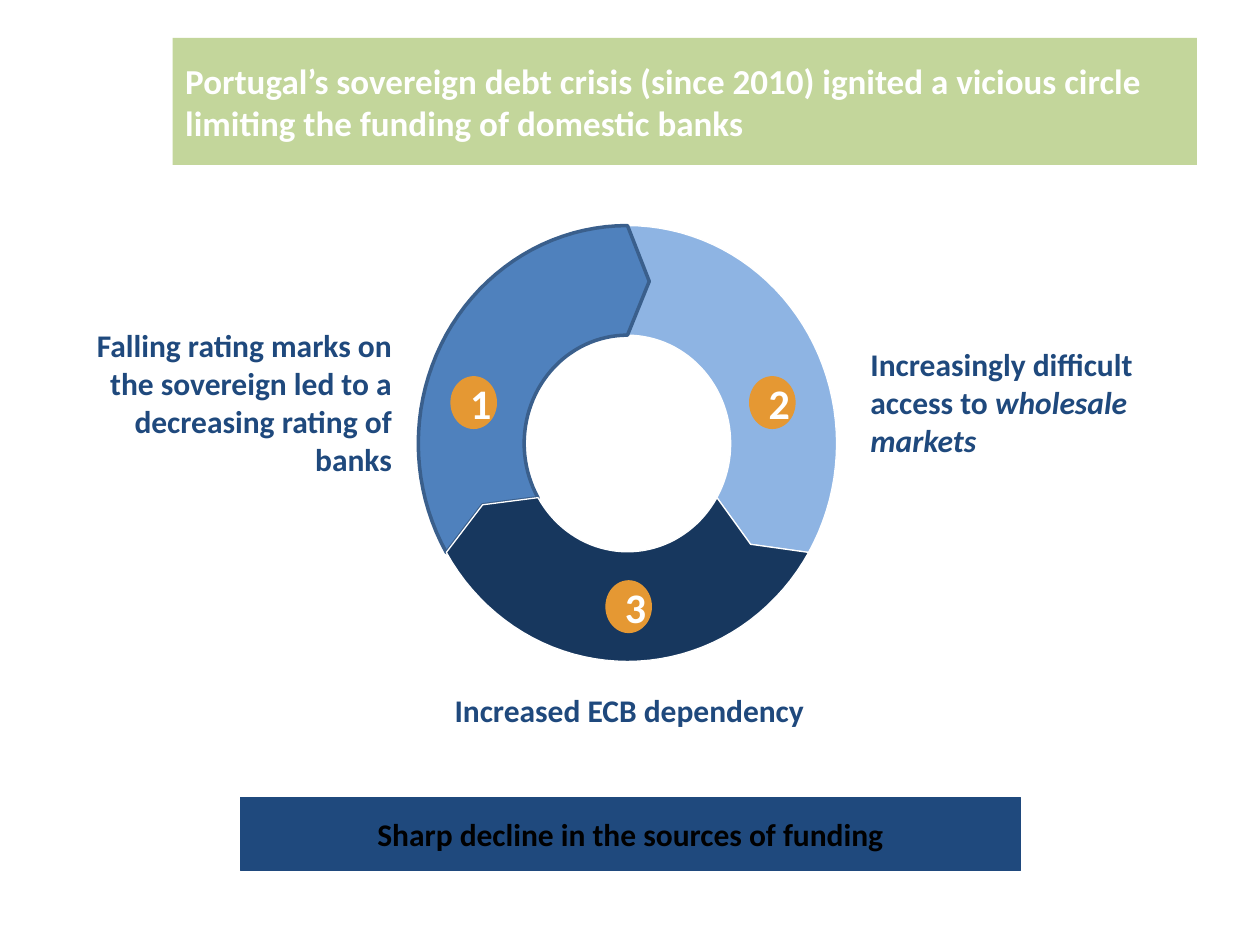
from math import cos, radians, sin

from pptx import Presentation
from pptx.dml.color import RGBColor
from pptx.enum.shapes import MSO_SHAPE
from pptx.enum.text import MSO_ANCHOR, MSO_AUTO_SIZE, PP_ALIGN
from pptx.util import Inches, Pt

NAVY = "1F497D"
WHITE = "FFFFFF"
AMBER = "E59833"
MID_X, MID_Y = 4.98, 3.52
OUTER = (1.66, 1.73)
INNER = (0.82, 0.86)
CENTRE = (1.24, 1.3)
SWEEP, TIP, STEP = 120, 8, 3


def color(code):
    return RGBColor.from_string(code)


def paint(shape, fill, line=None, width=0.75):
    shape.fill.solid()
    shape.fill.fore_color.rgb = color(fill)
    if line:
        shape.shadow.inherit = False
        shape.line.color.rgb = color(line)
        shape.line.width = Pt(width)


def write(shape, parts, size, code, align, inset=None):
    frame = shape.text_frame
    frame.word_wrap = True
    frame.auto_size = MSO_AUTO_SIZE.NONE
    frame.vertical_anchor = MSO_ANCHOR.MIDDLE
    if inset is not None:
        frame.margin_left = frame.margin_right = Inches(inset)
        frame.margin_top = frame.margin_bottom = Inches(inset)
    para = frame.paragraphs[0]
    para.alignment = align
    font = para.font
    font.name, font.size, font.bold = "Calibri", Pt(size), True
    font.color.rgb = color(code)
    for text, slant in parts:
        run = para.add_run()
        run.text = text
        if slant:
            run.font.italic = True


def add_title(slide, text, box):
    title = slide.shapes.title
    title.left, title.top, title.width, title.height = map(Inches, box)
    paint(title, "C3D69B")
    write(title, [(text, False)], 20, WHITE, PP_ALIGN.LEFT)


def add_label(slide, parts, box, align):
    label = slide.shapes.add_textbox(*map(Inches, box))
    write(label, parts, 18, NAVY, align, 0.1)


def add_banner(slide, text, box):
    banner = slide.shapes.add_shape(MSO_SHAPE.RECTANGLE, *map(Inches, box))
    paint(banner, NAVY, NAVY)
    write(banner, [(text, False)], 18, "000000", PP_ALIGN.CENTER)


def add_badge(slide, text, left, top):
    box = map(Inches, (left, top, 0.36, 0.41))
    badge = slide.shapes.add_shape(MSO_SHAPE.OVAL, *box)
    paint(badge, AMBER, AMBER)
    write(badge, [(text, False)], 24, WHITE, PP_ALIGN.CENTER, 0.1)


def spot(radii, angle):
    turn = radians(angle)
    return (Inches(MID_X + radii[0] * sin(turn)),
            Inches(MID_Y - radii[1] * cos(turn)))


def add_arc(slide, start, fill, line, width):
    end = start + SWEEP
    angles = range(start, end + 1, STEP)
    points = [spot(OUTER, angle) for angle in angles]
    points.append(spot(CENTRE, end + TIP))
    points += [spot(INNER, angle) for angle in reversed(angles)]
    points.append(spot(CENTRE, start + TIP))
    form = slide.shapes.build_freeform(*points[0], scale=1.0)
    form.add_line_segments(points[1:], close=True)
    paint(form.convert_to_shape(), fill, line, width)


def main():
    deck = Presentation()
    deck.slide_width, deck.slide_height = Inches(10), Inches(7.5)
    slide = deck.slides.add_slide(deck.slide_layouts[5])
    add_title(slide, "Portugal’s sovereign debt crisis (since 2010) ignited "
              "a vicious circle limiting the funding of domestic banks",
              (1.37, 0.3, 8.13, 1.01))
    add_label(slide, [("Falling rating marks on the sovereign led to a "
                       "decreasing rating of banks", False)],
              (0.43, 2.51, 2.78, 1.36), PP_ALIGN.RIGHT)
    add_label(slide, [("Increasingly difficult access to ", False),
                      ("wholesale markets", True)],
              (6.81, 2.51, 2.65, 1.36), PP_ALIGN.LEFT)
    add_label(slide, [("Increased ECB dependency", False)],
              (3.39, 5.03, 3.21, 1.21), PP_ALIGN.CENTER)
    for start, fill, line, width in ((0, "8EB4E3", WHITE, 0.75),
                                     (240, "4F81BD", "3A5F8C", 2),
                                     (120, "17375E", WHITE, 0.75)):
        add_arc(slide, start, fill, line, width)
    add_banner(slide, "Sharp decline in the sources of funding",
               (1.91, 6.33, 6.19, 0.58))
    for text, left, top in (("1", 3.58, 2.99), ("2", 5.95, 2.99),
                            ("3", 4.81, 4.61)):
        add_badge(slide, text, left, top)
    deck.save("out.pptx")


if __name__ == "__main__":
    main()
